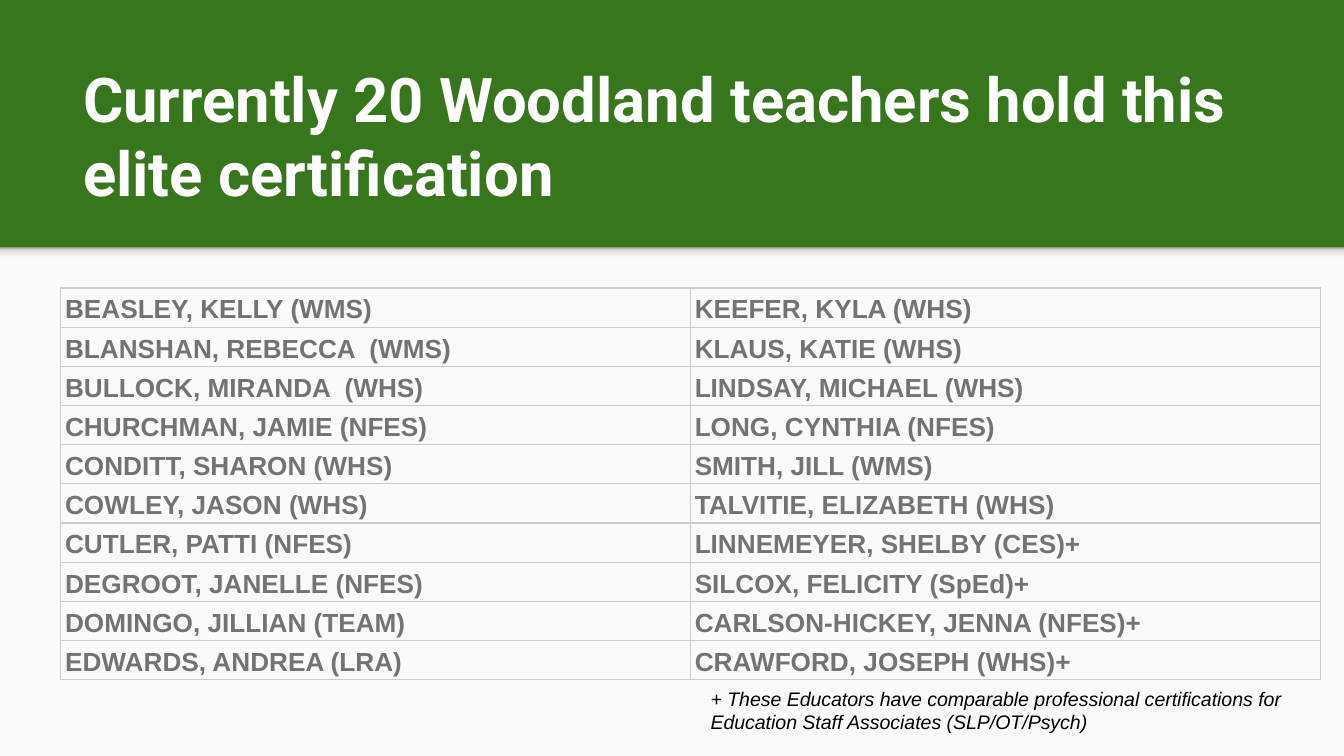
from lxml.etree import SubElement
from pptx import Presentation
from pptx.dml.color import RGBColor
from pptx.enum.shapes import MSO_SHAPE
from pptx.enum.text import MSO_ANCHOR, MSO_AUTO_SIZE, PP_ALIGN
from pptx.oxml.ns import qn
from pptx.util import Cm, Pt

GREEN = RGBColor(0x38, 0x76, 0x1D)
PAPER = RGBColor(0xFA, 0xFA, 0xFA)
WHITE = RGBColor(0xFF, 0xFF, 0xFF)
BLACK = RGBColor(0, 0, 0)
GREY = RGBColor(0x73, 0x73, 0x73)
RULE = RGBColor(0xCC, 0xCC, 0xCC)
SHADE_LIGHT = RGBColor(0xF9, 0xF9, 0xF9)
SHADE_MIDDLE = RGBColor(0xDE, 0xDE, 0xDE)
SHADE_DARK = RGBColor(0x99, 0x99, 0x99)

SLIDE_WIDTH, SLIDE_HEIGHT = 25.4, 14.28
BAND_HEIGHT = 4.67

TEACHERS = [
    ("BEASLEY, KELLY (WMS)", "KEEFER, KYLA (WHS)"),
    ("BLANSHAN, REBECCA  (WMS)", "KLAUS, KATIE (WHS)"),
    ("BULLOCK, MIRANDA  (WHS)", "LINDSAY, MICHAEL (WHS)"),
    ("CHURCHMAN, JAMIE (NFES)", "LONG, CYNTHIA (NFES)"),
    ("CONDITT, SHARON (WHS)", "SMITH, JILL (WMS)"),
    ("COWLEY, JASON (WHS)", "TALVITIE, ELIZABETH (WHS)"),
    ("CUTLER, PATTI (NFES)", "LINNEMEYER, SHELBY (CES)+"),
    ("DEGROOT, JANELLE (NFES)", "SILCOX, FELICITY (SpEd)+"),
    ("DOMINGO, JILLIAN (TEAM)", "CARLSON-HICKEY, JENNA (NFES)+"),
    ("EDWARDS, ANDREA (LRA)", "CRAWFORD, JOSEPH (WHS)+"),
]


class SlideBuilder:
    """Holds the text style and the current slide."""

    title_font = "Roboto"
    body_font = "Arial"

    def __init__(self, slide):
        self.slide = slide

    def background(self, color):
        fill = self.slide.background.fill
        fill.solid()
        fill.fore_color.rgb = color

    def run(self, paragraph, text, size, color, font=body_font, bold=False, italic=False):
        run = paragraph.add_run()
        run.text = text
        run.font.name = font
        run.font.size = Pt(size)
        run.font.bold = bold
        run.font.italic = italic
        run.font.color.rgb = color

    def rectangle(self, left, top, width, height):
        shape = self.slide.shapes.add_shape(
            MSO_SHAPE.RECTANGLE, Cm(left), Cm(top), Cm(width), Cm(height))
        shape.shadow.inherit = False
        shape.line.fill.background()
        return shape

    def panel(self, left, top, width, height, color):
        fill = self.rectangle(left, top, width, height).fill
        fill.solid()
        fill.fore_color.rgb = color

    def gradient_strip(self, left, top, width, height, stops):
        shape = self.rectangle(left, top, width, height)
        shape.fill.gradient()
        shape.fill.gradient_angle = 90
        stop_list = next(shape.element.iter(qn("a:gsLst")))
        for stop in list(stop_list):
            stop_list.remove(stop)
        for percent, color in stops:
            stop = SubElement(stop_list, qn("a:gs"), pos=str(percent * 1000))
            SubElement(stop, qn("a:srgbClr"), val=str(color))

    def title(self, text, left, top, width, height):
        shape = self.slide.shapes.title
        shape.left, shape.top = Cm(left), Cm(top)
        shape.width, shape.height = Cm(width), Cm(height)
        frame = shape.text_frame
        frame.word_wrap = True
        frame.auto_size = MSO_AUTO_SIZE.NONE
        frame.vertical_anchor = MSO_ANCHOR.BOTTOM
        frame.margin_left = frame.margin_right = Cm(0.25)
        frame.margin_top = frame.margin_bottom = Cm(0.25)
        paragraph = frame.paragraphs[0]
        paragraph.alignment = PP_ALIGN.LEFT
        self.run(paragraph, text, 33, WHITE, self.title_font, bold=True)

    def note(self, text, left, top, width, height):
        box = self.slide.shapes.add_textbox(Cm(left), Cm(top), Cm(width), Cm(height))
        frame = box.text_frame
        frame.word_wrap = True
        frame.auto_size = MSO_AUTO_SIZE.SHAPE_TO_FIT_TEXT
        self.run(frame.paragraphs[0], text, 10.5, BLACK, italic=True)

    def cell_borders(self, cell):
        properties = cell._tc.get_or_add_tcPr()
        for index, side in enumerate(("lnL", "lnR", "lnT", "lnB")):
            line = SubElement(properties, qn(f"a:{side}"), w=str(Pt(0.75)))
            fill = SubElement(line, qn("a:solidFill"))
            SubElement(fill, qn("a:srgbClr"), val=str(RULE))
            properties.insert(index, line)

    def table(self, rows, left, top, width, row_height):
        table = self.slide.shapes.add_table(
            len(rows), len(rows[0]), Cm(left), Cm(top),
            Cm(width), Cm(row_height * len(rows))).table
        table.first_row = False
        table.horz_banding = False
        for row_index, names in enumerate(rows):
            for column_index, name in enumerate(names):
                cell = table.cell(row_index, column_index)
                cell.fill.background()
                cell.vertical_anchor = MSO_ANCHOR.BOTTOM
                cell.margin_left = cell.margin_right = Cm(0.08)
                cell.margin_top = cell.margin_bottom = Cm(0.05)
                paragraph = cell.text_frame.paragraphs[0]
                paragraph.line_spacing = 1.15
                self.run(paragraph, name, 14, GREY, bold=True)
                self.cell_borders(cell)


def main():
    presentation = Presentation()
    presentation.slide_width = Cm(SLIDE_WIDTH)
    presentation.slide_height = Cm(SLIDE_HEIGHT)
    title_only = presentation.slide_layouts[5]
    builder = SlideBuilder(presentation.slides.add_slide(title_only))

    # Green band above a light panel with a soft shade at its top
    builder.background(GREEN)
    builder.panel(0, BAND_HEIGHT, SLIDE_WIDTH, SLIDE_HEIGHT - BAND_HEIGHT, PAPER)
    builder.gradient_strip(0, BAND_HEIGHT, SLIDE_WIDTH, 0.3, [
        (0, SHADE_LIGHT), (36, SHADE_LIGHT), (80, SHADE_MIDDLE), (100, SHADE_DARK)])

    # Title
    builder.title("Currently 20 Woodland teachers hold this elite certification",
                  1.32, 2.06, 22.83, 2.13)

    # Certified teachers
    builder.table(TEACHERS, 1.15, 5.44, 23.8, 0.74)

    # Footnote
    builder.note("+ These Educators have comparable professional certifications for "
                 "Education Staff Associates (SLP/OT/Psych)", 13.18, 12.85, 11.76, 1.19)

    presentation.save("out.pptx")


if __name__ == "__main__":
    main()
